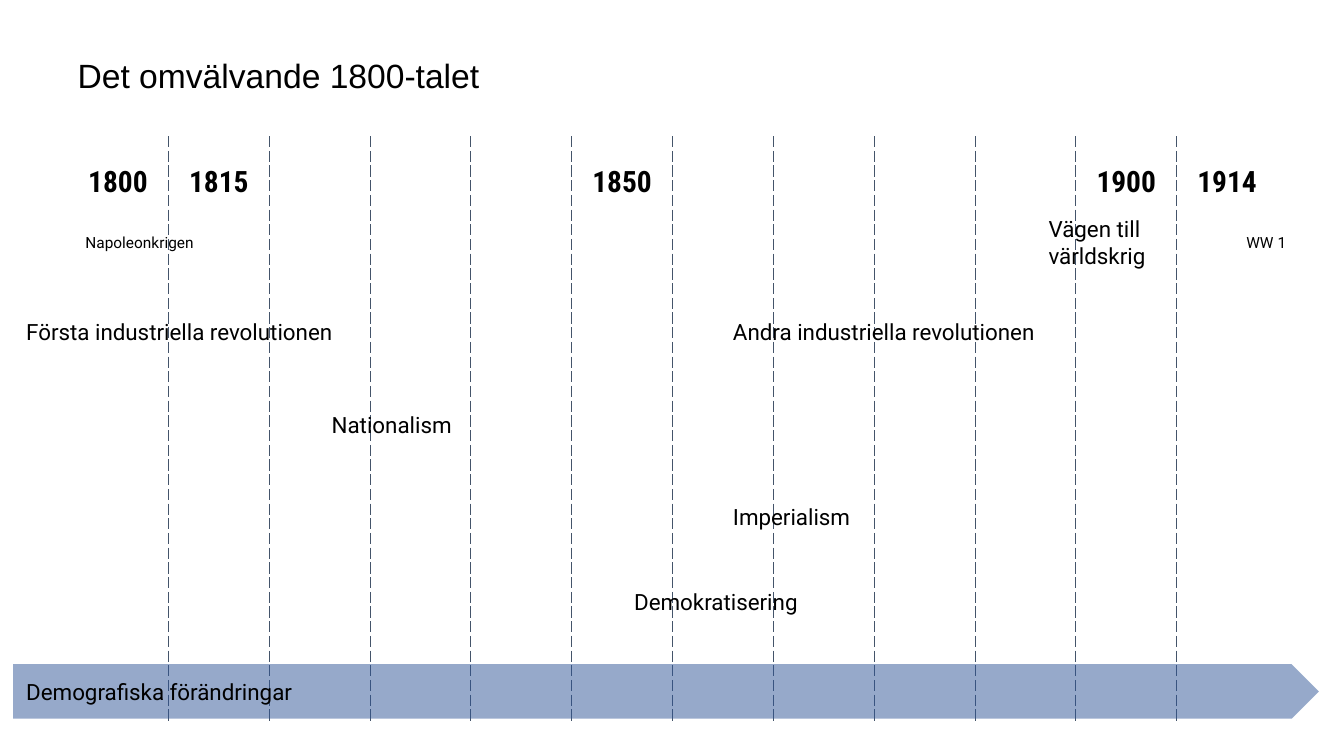
from lxml import etree
from pptx import Presentation
from pptx import util as u
from pptx.dml import color
from pptx.enum import shapes, text
from pptx.oxml import ns, parse_xml

PLATE = shapes.MSO_SHAPE.PENTAGON
ROUND = shapes.MSO_SHAPE.ROUNDED_RECTANGLE
LEFT, MID = text.PP_ALIGN.LEFT, text.PP_ALIGN.CENTER
PAD = u.Inches(0.13)
INSET = {"margin_left": PAD, "margin_right": PAD, "margin_top": PAD,
         "margin_bottom": PAD, "vertical_anchor": text.MSO_ANCHOR.MIDDLE}
HEAD = {"name": "Arial", "size": u.Pt(24), "bold": False}
YEAR = {"name": "Roboto Condensed", "size": u.Pt(21), "bold": True}
BODY = {"name": "Roboto", "size": u.Pt(16)}
SMALL = {"name": "Roboto", "size": u.Pt(11)}
YEARS = {0: "1800", 1: "1815", 5: "1850", 10: "1900", 11: "1914"}
BARS = [
    ("Nationalism", 3.16, 3.94, 9.92),
    ("Imperialism", 7.14, 4.85, 5.94),
    ("Andra industriella revolutionen", 7.14, 3.02, 5.43),
    ("Demokratisering", 6.16, 5.7, 6.92),
    ("Vägen till världskrig", 10.27, 2.13, 1.61),
    ("Första industriella revolutionen", 0.13, 3.02, 6.78),
]
WARS = [("Napoleonkrigen", 0.53, 2.13, 1.71), ("WW 1", 11.93, 2.13, 1.26)]
TREND = ("Demografiska förändringar", 0.13, 6.59, 12.95)


def rgb(code):
    return color.RGBColor.from_string(code)


def apply(item, form):
    for key, val in form.items():
        setattr(item, key, val)


def write(frame, words, form, align):
    para = frame.paragraphs[0]
    para.alignment = align
    run = para.add_run()
    run.text = words
    apply(run.font, form)
    run.font.color.rgb = rgb("000000")


def place(item, box):
    item.left, item.top, item.width, item.height = map(u.Inches, box)


def title(slide, box):
    head = slide.shapes.title
    place(head, box)
    frame = head.text_frame
    frame.vertical_anchor = text.MSO_ANCHOR.MIDDLE
    write(frame, "Det omvälvande 1800-talet", HEAD, LEFT)


def rule(cell, side):
    cell._tc.get_or_add_tcPr().append(parse_xml(
        f'<a:{side} {ns.nsdecls("a")} w="9525"><a:solidFill>'
        f'<a:srgbClr val="44546A"/></a:solidFill>'
        f'<a:prstDash val="dash"/></a:{side}>'))


def grid(slide, box, count, rows):
    table = slide.shapes.add_table(len(rows), count, *map(u.Inches, box)).table
    apply(table, {"first_row": False, "horz_banding": False})
    table._tbl.tblPr[0].text = "{2D5ABB26-0587-4C30-8999-92F81FD0307C}"
    for col in table.columns:
        col.width = u.Inches(box[2] / count)
    for y, high in enumerate(rows):
        table.rows[y].height = u.Inches(high)
        for x in range(count):
            cell = table.cell(y, x)
            if x > 0:
                rule(cell, "lnL")
            if x < count - 1:
                rule(cell, "lnR")
            cell.fill.background()
            apply(cell, INSET)
            if y == 0 and x in YEARS:
                write(cell.text_frame, YEARS[x], YEAR, MID)


def label(slide, kind, item, form, align):
    words, x, y, wide = item
    shape = slide.shapes.add_shape(kind, *map(u.Inches, (x, y, wide, 0.54)))
    shape.shadow.inherit = False
    shape.fill.background()
    shape.line.fill.background()
    frame = shape.text_frame
    apply(frame, INSET)
    frame.word_wrap = True
    write(frame, words, form, align)
    return shape


def trend(slide, item):
    shape = label(slide, PLATE, item, BODY, LEFT)
    shape.fill.solid()
    shape.fill.fore_color.rgb = rgb("2F5597")
    tint = shape._element.spPr.find(ns.qn("a:solidFill"))[0]
    etree.SubElement(tint, ns.qn("a:alpha"), val="50000")


def main():
    deck = Presentation()
    deck.slide_width, deck.slide_height = u.Inches(13.33), u.Inches(7.5)
    slide = deck.slides.add_slide(deck.slide_layouts[5])
    title(slide, (0.67, 0.47, 12, 0.54))
    grid(slide, (0.67, 1.35, 12, 5.82), 12, (0.92, 4.9))
    for item in BARS:
        label(slide, PLATE, item, BODY, LEFT)
    for item in WARS:
        label(slide, ROUND, item, SMALL, MID)
    trend(slide, TREND)
    deck.save("out.pptx")


if __name__ == "__main__":
    main()
